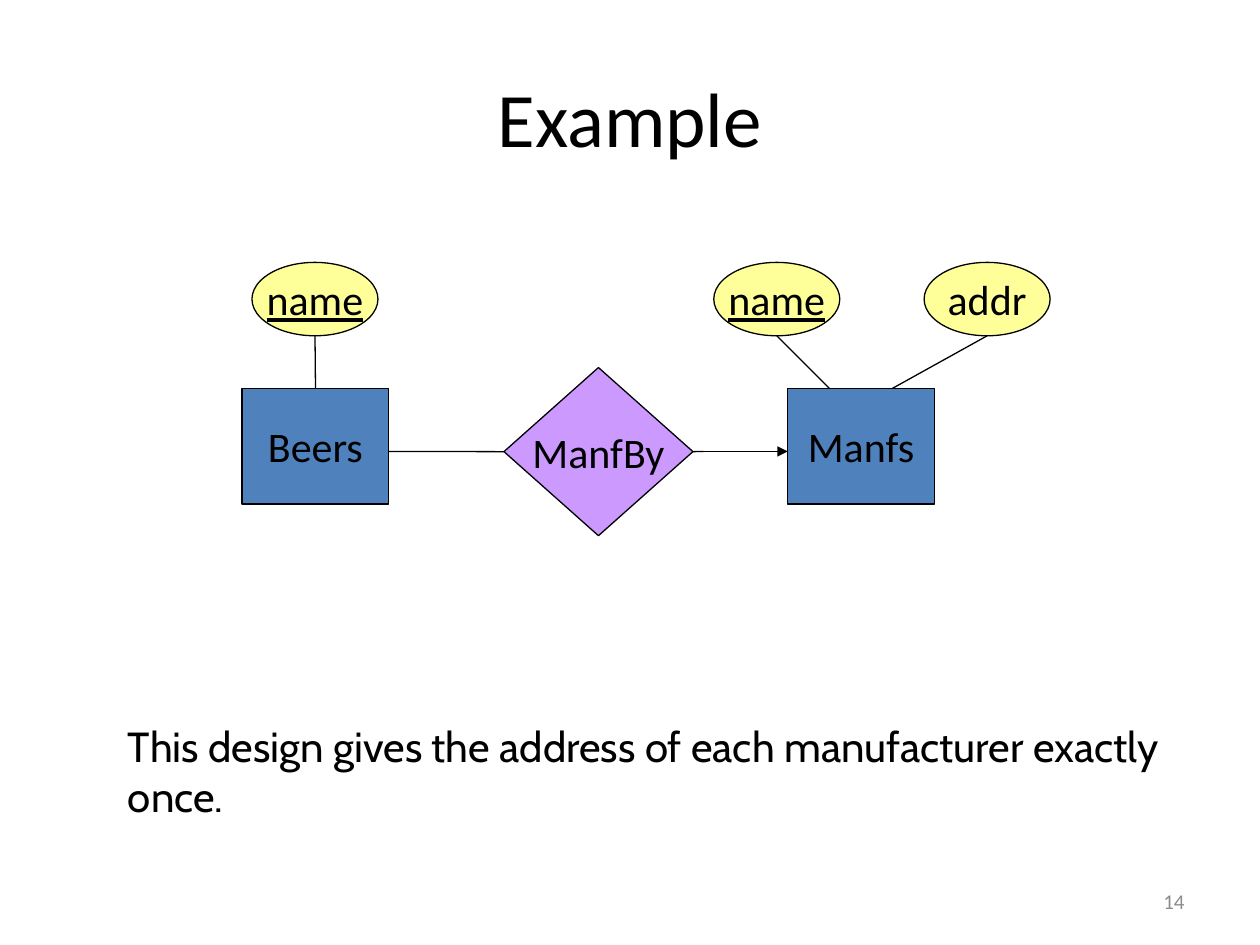
from lxml import etree
from pptx import Presentation
from pptx.dml.color import RGBColor
from pptx.enum.shapes import MSO_CONNECTOR, MSO_SHAPE
from pptx.enum.text import MSO_ANCHOR, PP_ALIGN
from pptx.oxml.ns import qn
from pptx.util import Cm, Pt

RECTANGLE, DIAMOND, OVAL = MSO_SHAPE.RECTANGLE, MSO_SHAPE.DIAMOND, MSO_SHAPE.OVAL
STRAIGHT = MSO_CONNECTOR.STRAIGHT
LEFT, CENTER, RIGHT = PP_ALIGN.LEFT, PP_ALIGN.CENTER, PP_ALIGN.RIGHT
TOP, MIDDLE = MSO_ANCHOR.TOP, MSO_ANCHOR.MIDDLE


def rgb(value):
    return RGBColor.from_string(value)


def write(shape, text, size, align, anchor=MIDDLE, wrap=True, font="Calibri", color="000000"):
    frame = shape.text_frame
    frame.word_wrap = wrap
    frame.vertical_anchor = anchor
    paragraph = frame.paragraphs[0]
    paragraph.text = text
    paragraph.alignment = align
    paragraph.font.size = Pt(size)
    paragraph.font.name = font
    paragraph.font.color.rgb = rgb(color)
    return paragraph


prs = Presentation()
prs.slide_width, prs.slide_height = Cm(25.4), Cm(19.05)
slide = prs.slides.add_slide(prs.slide_layouts[6])
shapes = slide.shapes

title = shapes.add_textbox(Cm(1.27), Cm(0.76), Cm(22.86), Cm(3.18))
write(title, "Example", 44, CENTER)

entity = (RECTANGLE, "4F81BD", 7.83, 2.96, 2.33)
relationship = (DIAMOND, "CC99FF", 7.41, 3.81, 3.39)
attribute = (OVAL, "FFFF99", 5.29, 2.54, 1.48)
diagram = [
    ("Beers", entity, 4.88, False),
    ("Manfs", entity, 15.88, False),
    ("ManfBy", relationship, 10.16, False),
    ("name", attribute, 5.08, True),
    ("name", attribute, 14.39, True),
    ("addr", attribute, 18.63, False),
]
nodes = []
for label, (geometry, fill, top, width, height), left, is_key in diagram:
    node = shapes.add_shape(geometry, Cm(left), Cm(top), Cm(width), Cm(height))
    node.shadow.inherit = False
    node.fill.solid()
    node.fill.fore_color.rgb = rgb(fill)
    node.line.color.rgb = rgb("000000")
    node.line.width = Pt(0.75)
    paragraph = write(node, label, 24, CENTER, wrap=False)
    if is_key:
        paragraph.font.underline = True
    nodes.append(node)
beers, manfs, manf_by = nodes[:3]

axis, attribute_bottom, entity_top = 9.1, 6.77, 7.83
links = [
    (13.97, axis, 14.18, axis, (manf_by, 3), None, False),
    (10.16, axis, 7.84, axis, (manf_by, 1), None, False),
    (6.35, attribute_bottom, 6.35, entity_top, None, (beers, 0), False),
    (15.66, attribute_bottom, 16.72, entity_top, None, None, False),
    (19.9, attribute_bottom, 17.99, entity_top, None, None, False),
    (14.18, axis, 15.88, axis, None, None, True),
]
for x1, y1, x2, y2, start, end, has_arrow in links:
    link = shapes.add_connector(STRAIGHT, Cm(x1), Cm(y1), Cm(x2), Cm(y2))
    if start:
        link.begin_connect(*start)
    if end:
        link.end_connect(*end)
    link.line.color.rgb = rgb("000000")
    link.line.width = Pt(0.75)
    if has_arrow:
        etree.SubElement(link.line._get_or_add_ln(), qn("a:tailEnd"), type="triangle")
    etree.SubElement(link._element.spPr, qn("a:effectLst"))

remark = shapes.add_textbox(Cm(2.33), Cm(14.4), Cm(21.39), Cm(2.31))
write(remark, "This design gives the address of each manufacturer exactly once.", 24, LEFT,
      anchor=TOP, font="Cabin")

page_number = shapes.add_textbox(Cm(18.2), Cm(17.66), Cm(5.93), Cm(1.01))
write(page_number, "14", 12, RIGHT, color="8C8C8C")

prs.save("out.pptx")
